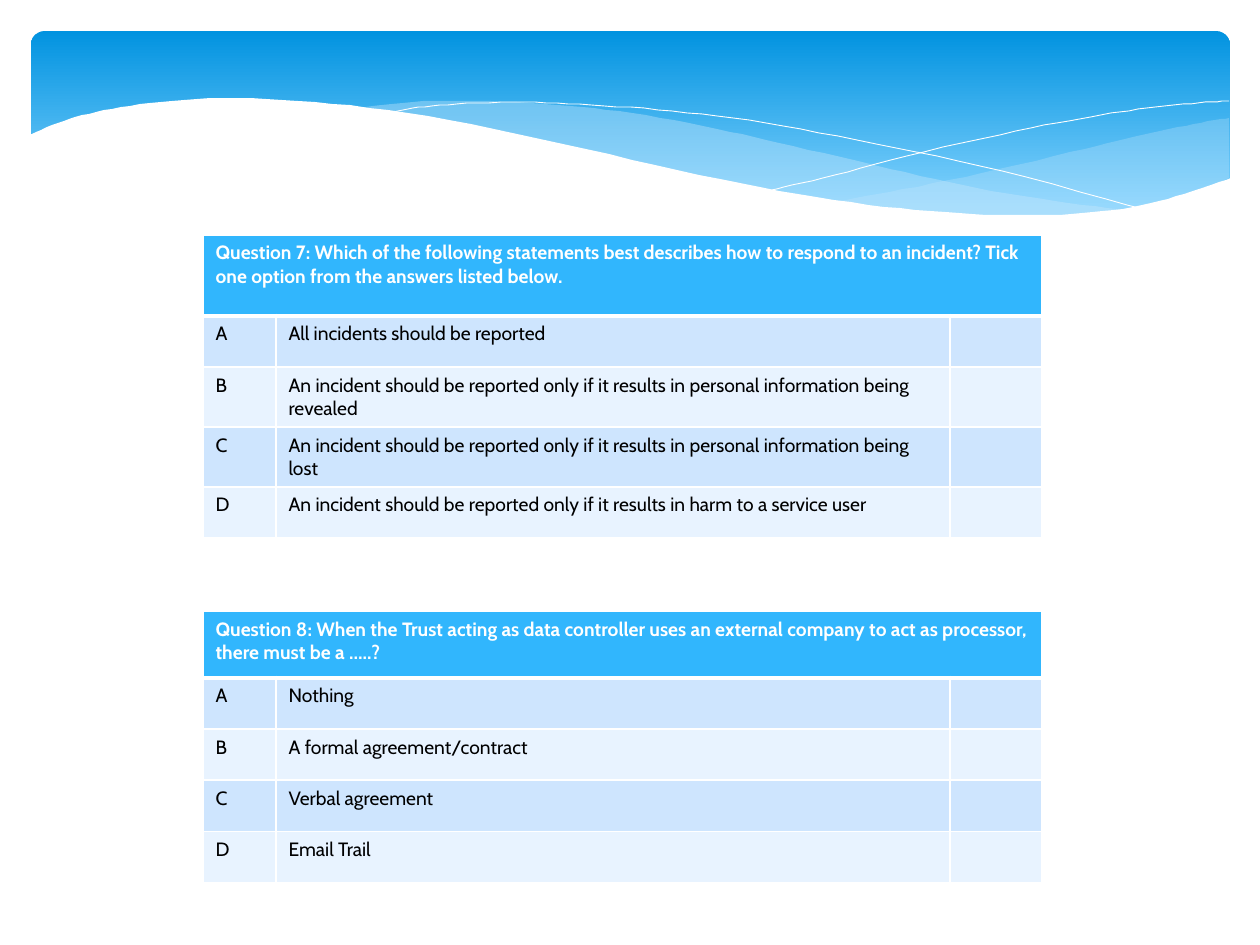
from lxml import etree
from pptx import Presentation
from pptx import util as u
from pptx.dml.color import RGBColor
from pptx.enum import shapes
from pptx.oxml import ns

PX = 914400 / 126  # EMU in one px

WHITE = RGBColor(0xFF, 0xFF, 0xFF)
BLACK = RGBColor(0x00, 0x00, 0x00)
SKY_TOP = RGBColor(0x02, 0x93, 0xE0)
SKY_BOTTOM = RGBColor(0x83, 0xD3, 0xFE)
BAND = RGBColor(0xC6, 0xE7, 0xFC)
HEADER = RGBColor(0x31, 0xB6, 0xFD)
ROW_FILLS = (RGBColor(0xCE, 0xE5, 0xFE), RGBColor(0xE8, 0xF3, 0xFF))

FONT = "Cabin"
TABLE_LEFT = 203
COLUMNS = (73, 674, 92)

# Points that the banner's curves pass through
RIGHT_BAND_TOP = [(1229, 118), (1194, 124), (1142, 135), (1085, 149),
                  (982, 173), (890, 192), (833, 202)]
RIGHT_BAND_BOTTOM = [(833, 202), (888, 208), (954, 213), (1026, 217),
                     (1100, 215), (1160, 202), (1196, 192), (1229, 178)]
MIDDLE_BAND_TOP = [(1125, 210), (1055, 201), (977, 188), (890, 169),
                   (793, 146), (717, 129), (632, 113), (557, 105),
                   (479, 101), (413, 102), (360, 108)]
MIDDLE_BAND_BOTTOM = [(360, 108), (431, 118), (483, 127), (566, 146),
                      (668, 170), (757, 189), (838, 203), (909, 212),
                      (989, 217), (1056, 217), (1125, 210)]
FALLING_LINE = [(389, 113), (413, 108), (457, 104), (524, 102), (591, 105),
                (672, 111), (766, 123), (876, 144), (1002, 171), (1143, 209)]
RISING_LINE = [(772, 190), (823, 178), (907, 156), (1016, 131), (1091, 117),
               (1147, 108), (1198, 103), (1229, 101)]
WAVE_EDGE = [(29, 135), (58, 123), (96, 112), (150, 103), (223, 98),
             (315, 102), (428, 116), (563, 144), (699, 175), (816, 197),
             (915, 210), (999, 215), (1071, 214), (1133, 207), (1184, 194),
             (1231, 178)]
WAVE_BASE = [(1231, 282), (29, 282)]

QUESTION_7 = (
    "Question 7: Which of the following statements best describes how to "
    "respond to an incident? Tick one option from the answers listed below.",
    ["All incidents should be reported",
     "An incident should be reported only if it results in personal "
     "information being revealed",
     "An incident should be reported only if it results in personal "
     "information being lost",
     "An incident should be reported only if it results in harm to a "
     "service user"])
QUESTION_8 = (
    "Question 8: When the Trust acting as data controller uses an external "
    "company to act as processor, there must be a …..?",
    ["Nothing", "A formal agreement/contract", "Verbal agreement",
     "Email Trail"])


def px(n):
    return u.Emu(round(n * PX))


def smooth(points, steps=6):
    """Catmull-Rom curve through the points, as a list of short steps."""
    ends = [points[0], *points, points[-1]]
    curve = [points[0]]
    for a, b, c, d in zip(ends, ends[1:], ends[2:], ends[3:]):
        for i in range(1, steps + 1):
            t = i / steps
            curve.append(tuple(
                (2 * q + (r - p) * t + (2 * p - 5 * q + 4 * r - s) * t ** 2
                 + (3 * q - p - 3 * r + s) * t ** 3) / 2
                for p, q, r, s in zip(a, b, c, d)))
    return curve


def add_outline(slide, points, close):
    (x, y), *rest = points
    builder = slide.shapes.build_freeform(x, y, scale=PX)
    builder.add_line_segments(rest, close=close)
    s = builder.convert_to_shape()
    s.shadow.inherit = False
    return s


def add_area(slide, points, color, alpha=100):
    s = add_outline(slide, points, True)
    s.fill.solid()
    s.fill.fore_color.rgb = color
    s.line.fill.background()
    if alpha < 100:
        clr = s.fill._xPr.find(".//" + ns.qn("a:srgbClr"))
        etree.SubElement(clr, ns.qn("a:alpha"), val=str(alpha * 1000))


def add_curve(slide, points):
    s = add_outline(slide, smooth(points), False)
    s.fill.background()
    s.line.color.rgb = WHITE
    s.line.width = u.Pt(0.5)


def add_banner(slide):
    s = slide.shapes.add_shape(shapes.MSO_SHAPE.ROUNDED_RECTANGLE,
                               px(31), px(31), px(1199), px(197))
    s.adjustments[0] = 0.07
    s.shadow.inherit = False
    s.line.fill.background()
    s.fill.gradient()
    s.fill.gradient_angle = 270
    stops = zip(s.fill.gradient_stops, (0, 0.9), (SKY_TOP, SKY_BOTTOM))
    for stop, position, color in stops:
        stop.position = position
        stop.color.rgb = color

    add_area(slide, smooth(RIGHT_BAND_TOP) + smooth(RIGHT_BAND_BOTTOM),
             BAND, 29)
    add_area(slide, smooth(MIDDLE_BAND_TOP) + smooth(MIDDLE_BAND_BOTTOM),
             BAND, 40)
    add_curve(slide, FALLING_LINE)
    add_curve(slide, RISING_LINE)
    add_area(slide, smooth(WAVE_EDGE) + WAVE_BASE, WHITE)


def set_borders(cell, top, bottom):
    tcPr = cell._tc.get_or_add_tcPr()
    for side, width in (("L", 1), ("R", 1), ("T", top), ("B", bottom)):
        ln = etree.SubElement(tcPr, ns.qn("a:ln" + side),
                              w=str(u.Pt(width)))
        fill = etree.SubElement(ln, ns.qn("a:solidFill"))
        etree.SubElement(fill, ns.qn("a:srgbClr"), val=str(WHITE))


def fill_cell(cell, content, fill, color, bold=False, top=1, bottom=1):
    set_borders(cell, top, bottom)
    cell.fill.solid()
    cell.fill.fore_color.rgb = fill
    cell.text_frame.text = content
    for r in cell.text_frame.paragraphs[0].runs:
        r.font.name = FONT
        r.font.size = u.Pt(11)
        r.font.bold = bold
        r.font.color.rgb = color


def add_question(slide, top, heights, question, answers):
    frame = slide.shapes.add_table(
        len(heights), len(COLUMNS), px(TABLE_LEFT), px(top),
        px(sum(COLUMNS)), px(sum(heights)))
    table = frame.table
    for column, width in zip(table.columns, COLUMNS):
        column.width = px(width)
    for row, height in zip(table.rows, heights):
        row.height = px(height)

    # Question across the full width
    for i in range(len(COLUMNS)):
        fill_cell(table.cell(0, i), question if i == 0 else "",
                  HEADER, WHITE, bold=True, bottom=3)
    table.cell(0, 0).merge(table.cell(0, len(COLUMNS) - 1))

    # Letter, answer and tick box
    for i, (letter, answer) in enumerate(zip("ABCD", answers)):
        for j, content in enumerate((letter, answer, "")):
            fill_cell(table.cell(i + 1, j), content, ROW_FILLS[i % 2],
                      BLACK, top=3 if i == 0 else 1)


def main():
    prs = Presentation()
    prs.slide_width, prs.slide_height = px(1260), px(945)
    slide = prs.slides.add_slide(prs.slide_layouts[6])
    add_banner(slide)
    add_question(slide, 235, (81, 51, 60, 60, 51), *QUESTION_7)
    add_question(slide, 611, (67, 51, 51, 51, 51), *QUESTION_8)
    prs.save("out.pptx")


if __name__ == "__main__":
    main()
